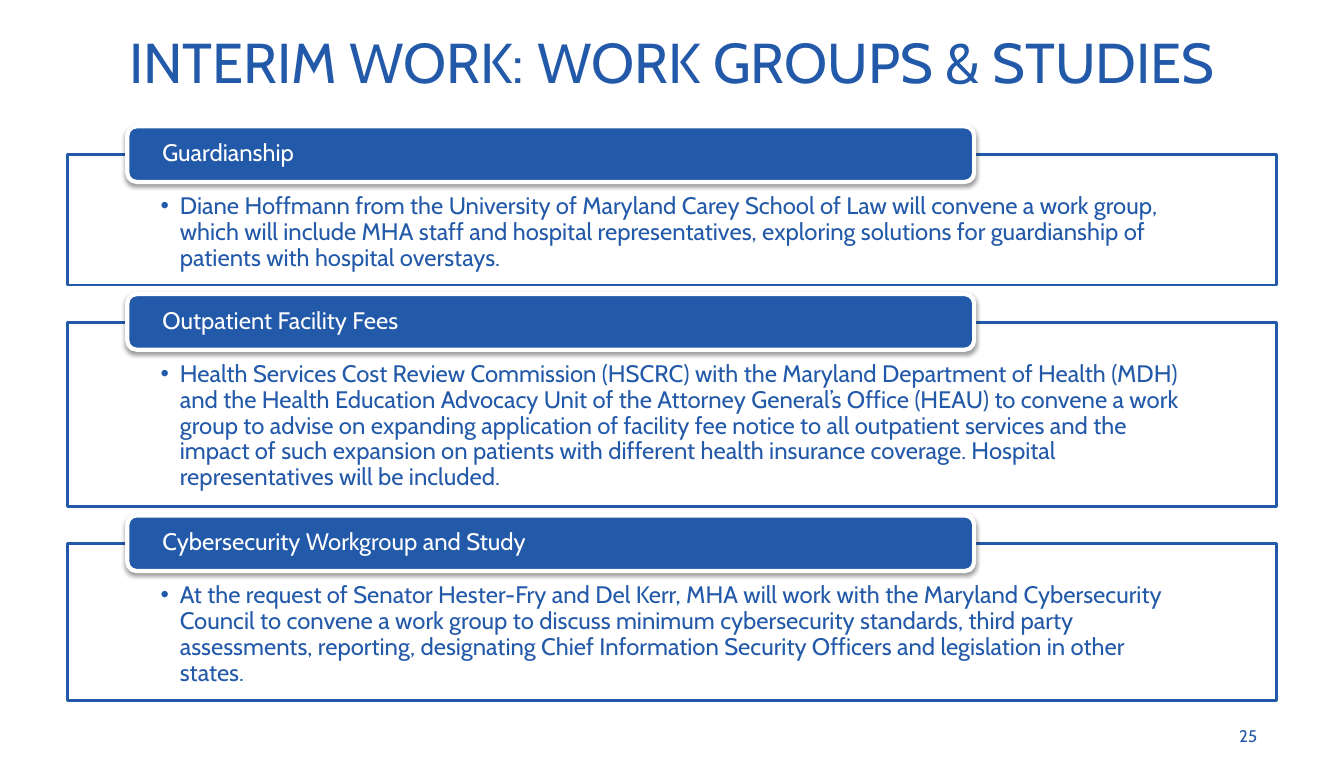
from lxml.etree import SubElement
from pptx import Presentation
from pptx.dml.color import RGBColor
from pptx.enum.shapes import MSO_SHAPE as SHAPE
from pptx.enum.text import MSO_ANCHOR as ANCHOR, MSO_AUTO_SIZE as AUTO_SIZE, PP_ALIGN as ALIGN
from pptx.oxml.ns import qn
from pptx.util import Pt

PX = 9144
BLUE = RGBColor(0x23, 0x59, 0xA9)
WHITE = RGBColor(0xFF, 0xFF, 0xFF)
LEFT, WIDTH = 67, 1196
HEADING_RISE, GAP = 28, 37

TOPICS = [
    ("Guardianship", 129,
     "Diane Hoffmann from the University of Maryland Carey School of Law will convene a work group, "
     "which will include MHA staff and hospital representatives, exploring solutions for guardianship "
     "of patients with hospital overstays."),
    ("Outpatient Facility Fees", 182,
     "Health Services Cost Review Commission (HSCRC) with the Maryland Department of Health (MDH) and "
     "the Health Education Advocacy Unit of the Attorney General’s Office (HEAU) to convene a work "
     "group to advise on expanding application of facility fee notice to all outpatient services and "
     "the impact of such expansion on patients with different health insurance coverage. Hospital "
     "representatives will be included."),
    ("Cybersecurity Workgroup and Study", 155,
     "At the request of Senator Hester-Fry and Del Kerr, MHA will work with the Maryland Cybersecurity "
     "Council to convene a work group to discuss minimum cybersecurity standards, third party "
     "assessments, reporting, designating Chief Information Security Officers and legislation in "
     "other states."),
]


def write(shape, text, size, color, align, anchor, insets=(10, 5, 10, 5)):
    frame = shape.text_frame
    frame.word_wrap = True
    frame.auto_size = AUTO_SIZE.NONE
    frame.vertical_anchor = anchor
    frame.margin_left, frame.margin_top, frame.margin_right, frame.margin_bottom = (
        inset * PX for inset in insets)
    paragraph = frame.paragraphs[0]
    paragraph.alignment = align
    run = paragraph.add_run()
    run.text = text
    run.font.name = "Cabin"
    run.font.size = Pt(size)
    run.font.color.rgb = color
    return paragraph


def add_panel(kind, left, top, width, height, fill, line, weight):
    panel = slide.shapes.add_shape(kind, left * PX, top * PX, width * PX, height * PX)
    panel.fill.solid()
    panel.fill.fore_color.rgb = fill
    panel.line.color.rgb = line
    panel.line.width = Pt(weight)
    panel.shadow.inherit = False
    return panel


deck = Presentation()
deck.slide_width, deck.slide_height = 1330 * PX, 750 * PX
slide = deck.slides.add_slide(deck.slide_layouts[5])

title = slide.shapes.title
title.left, title.top, title.width, title.height = LEFT * PX, -2 * PX, WIDTH * PX, 125 * PX
write(title, "INTERIM WORK: WORK GROUPS & STUDIES", 40, BLUE, ALIGN.CENTER, ANCHOR.MIDDLE)

page_number = slide.shapes.add_textbox(1188 * PX, 708 * PX, 66 * PX, 40 * PX)
write(page_number, "25", 12, BLUE, ALIGN.RIGHT, ANCHOR.MIDDLE)

top = 153
for topic, height, summary in TOPICS:
    details = add_panel(SHAPE.RECTANGLE, LEFT, top, WIDTH, height, WHITE, BLUE, 2)
    white_fill = details._element.spPr.find(qn("a:solidFill")).find(qn("a:srgbClr"))
    SubElement(white_fill, qn("a:alpha"), val="90000")
    bullet = write(details, summary, 17, BLUE, ALIGN.LEFT, ANCHOR.TOP, (92, 39, 92, 5))
    properties = bullet._p.get_or_add_pPr()
    properties.set("marL", str(19 * PX))
    properties.set("indent", str(-19 * PX))
    SubElement(properties, qn("a:buFont"), typeface="Arial")
    SubElement(properties, qn("a:buChar"), char="•")
    bullet.line_spacing = 0.9

    heading = add_panel(SHAPE.ROUNDED_RECTANGLE, 126, top - HEADING_RISE, 838, 55, BLUE, WHITE, 3)
    effects = heading._element.spPr.find(qn("a:effectLst"))
    shadow = SubElement(effects, qn("a:outerShdw"), blurRad=str(Pt(3.1)), dist=str(Pt(1.6)),
                        dir="5400000", rotWithShape="0")
    black = SubElement(shadow, qn("a:srgbClr"), val="000000")
    SubElement(black, qn("a:alpha"), val="38000")
    label = write(heading, topic, 17, WHITE, ALIGN.LEFT, ANCHOR.MIDDLE, (32, 0, 32, 0))
    label.line_spacing = 0.9

    top += height + GAP

deck.save("out.pptx")
